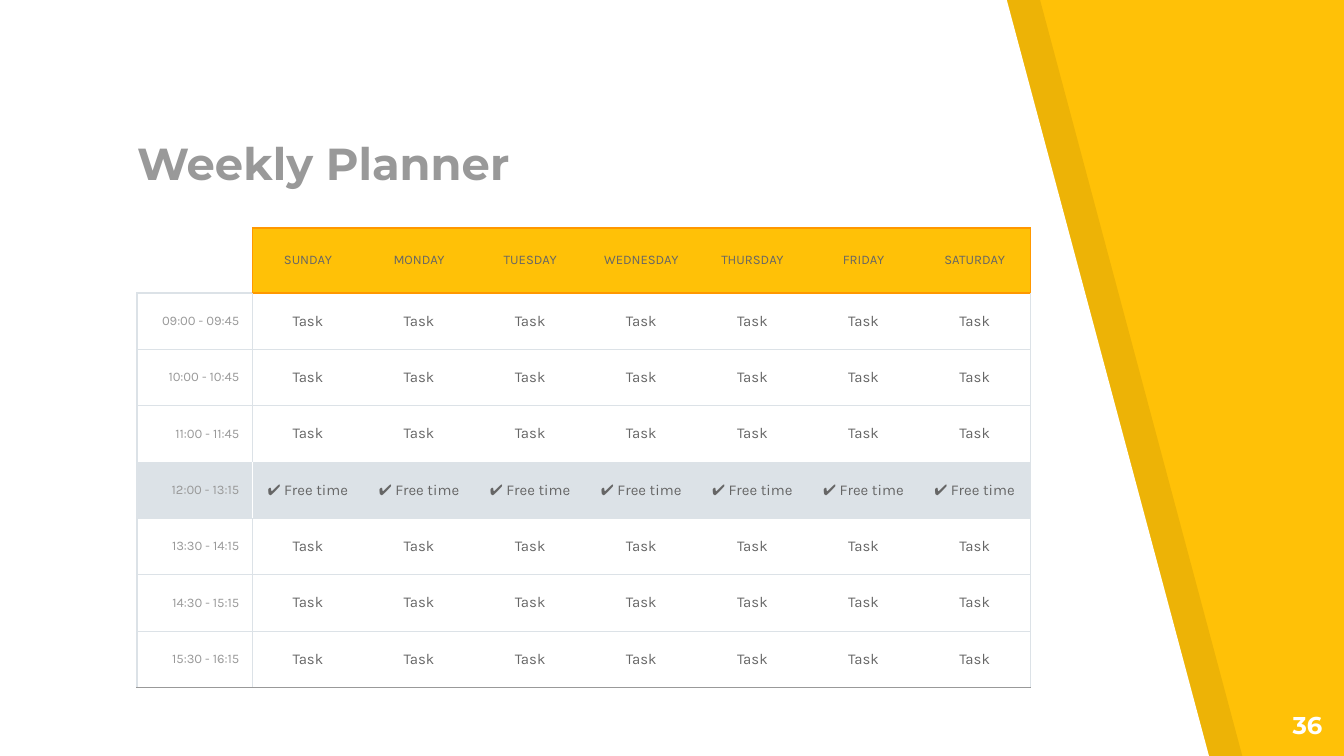
from lxml import etree
from pptx import Presentation
from pptx.dml.color import RGBColor
from pptx.enum import text as tx
from pptx.oxml import ns
from pptx.util import Cm, Pt

GOLD = RGBColor(0xFF, 0xC1, 0x07)
ORANGE = RGBColor(0xFF, 0x98, 0x00)
WHITE = RGBColor(0xFF, 0xFF, 0xFF)
BLACK = RGBColor(0, 0, 0)
PALE = RGBColor(0xDC, 0xE2, 0xE7)
GREY = RGBColor(0x99, 0x99, 0x99)
DARK = RGBColor(0x66, 0x66, 0x66)

LEFT, MID, RIGHT = tx.PP_ALIGN.LEFT, tx.PP_ALIGN.CENTER, tx.PP_ALIGN.RIGHT
DAYS = ["SUNDAY", "MONDAY", "TUESDAY", "WEDNESDAY", "THURSDAY", "FRIDAY", "SATURDAY"]
TIMES = ["09:00 - 09:45", "10:00 - 10:45", "11:00 - 11:45", "12:00 - 13:15",
         "13:30 - 14:15", "14:30 - 15:15", "15:30 - 16:15"]
BREAK = 4
PAD = Cm(0.25)


def write(frame, words, size=8, font="Karla", color=DARK, bold=False, align=MID):
    para = frame.paragraphs[0]
    para.alignment = align
    run = para.add_run()
    run.text = words
    run.font.size = Pt(size)
    run.font.name = font
    run.font.bold = bold
    run.font.color.rgb = color


def pad(frame):
    frame.margin_left = frame.margin_right = PAD
    frame.margin_top = frame.margin_bottom = PAD


def wedge(slide, left, color, alpha=None):
    pts = [(0, -0.03), (0, 14.33), (22.86, 14.33), (19.02, -0.03)]
    pts = [(Cm(left + x), Cm(y)) for x, y in pts]
    pen = slide.shapes.build_freeform(*pts[0])
    pen.add_line_segments(pts[1:], close=True)
    shape = pen.convert_to_shape()
    shape.shadow.inherit = False
    shape.fill.solid()
    shape.fill.fore_color.rgb = color
    shape.line.fill.background()
    if alpha:
        tint = shape.element.spPr.find(".//" + ns.qn("a:srgbClr"))
        etree.SubElement(tint, ns.qn("a:alpha"), val=str(alpha * 1000))


def head(slide):
    title = slide.shapes.title
    title.left, title.top = Cm(2.34), Cm(2.7)
    title.width, title.height = Cm(13.34), Cm(1.14)
    frame = title.text_frame
    pad(frame)
    frame.auto_size = tx.MSO_AUTO_SIZE.NONE
    frame.vertical_anchor = tx.MSO_ANCHOR.BOTTOM
    write(frame, "Weekly Planner", size=24, font="Montserrat",
          color=GREY, bold=True, align=LEFT)
    title.element.getparent().append(title.element)


def number(slide):
    box = slide.shapes.add_textbox(Cm(23.72), Cm(13.18), Cm(1.52), Cm(1.09))
    frame = box.text_frame
    frame.word_wrap = True
    pad(frame)
    write(frame, "36", size=13, font="Montserrat", color=WHITE, bold=True, align=RIGHT)


def level(edge, col):
    if edge == len(TIMES) + 1:
        return GREY
    if edge < 2 and col:
        return ORANGE
    return PALE if edge else None


def upright(edge, row):
    if 1 < edge <= len(DAYS):
        return None
    if row == 0:
        return ORANGE if edge else None
    return WHITE if (edge, row) == (1, BREAK) else PALE


def border(cell, side, color):
    props = cell._tc.get_or_add_tcPr()
    line = etree.SubElement(props, ns.qn("a:ln" + side), w=str(Pt(0.75)))
    if color is None:
        etree.SubElement(line, ns.qn("a:noFill"))
    else:
        fill = etree.SubElement(line, ns.qn("a:solidFill"))
        etree.SubElement(fill, ns.qn("a:srgbClr"), val=str(color))


def style(cell, row, col):
    border(cell, "L", upright(col, row))
    border(cell, "R", upright(col + 1, row))
    border(cell, "T", level(row, col))
    border(cell, "B", level(row + 1, col))
    shade = PALE if row == BREAK else GOLD if row == 0 and col else None
    if shade is None:
        cell.fill.background()
    else:
        cell.fill.solid()
        cell.fill.fore_color.rgb = shade
    cell.vertical_anchor = tx.MSO_ANCHOR.MIDDLE
    if row or col:
        pad(cell)
    else:
        cell.margin_top = cell.margin_bottom = 0


def label(cell, row, col):
    if row and col:
        write(cell.text_frame, "✔ Free time" if row == BREAK else "Task")
    elif row:
        write(cell.text_frame, TIMES[row - 1], size=7, color=GREY, align=RIGHT)
    elif col:
        write(cell.text_frame, DAYS[col - 1], size=7)


def planner(slide):
    rows, cols = len(TIMES) + 1, len(DAYS) + 1
    grid = slide.shapes.add_table(rows, cols, Cm(2.59), Cm(4.31), Cm(16.88), Cm(8.69)).table
    grid.first_row = grid.horz_banding = False
    for col in range(cols):
        grid.columns[col].width = Cm(2.1 if col else 2.18)
    for row in range(rows):
        grid.rows[row].height = Cm(1.065 if row else 1.23)
        for col in range(cols):
            cell = grid.cell(row, col)
            style(cell, row, col)
            label(cell, row, col)


def main():
    deck = Presentation()
    deck.slide_width, deck.slide_height = Cm(25.4), Cm(14.29)
    slide = deck.slides.add_slide(deck.slide_layouts[5])
    slide.background.fill.solid()
    slide.background.fill.fore_color.rgb = GOLD
    wedge(slide, 0.63, BLACK, alpha=7)
    wedge(slide, 0, WHITE)
    head(slide)
    number(slide)
    planner(slide)
    deck.save("out.pptx")


if __name__ == "__main__":
    main()
